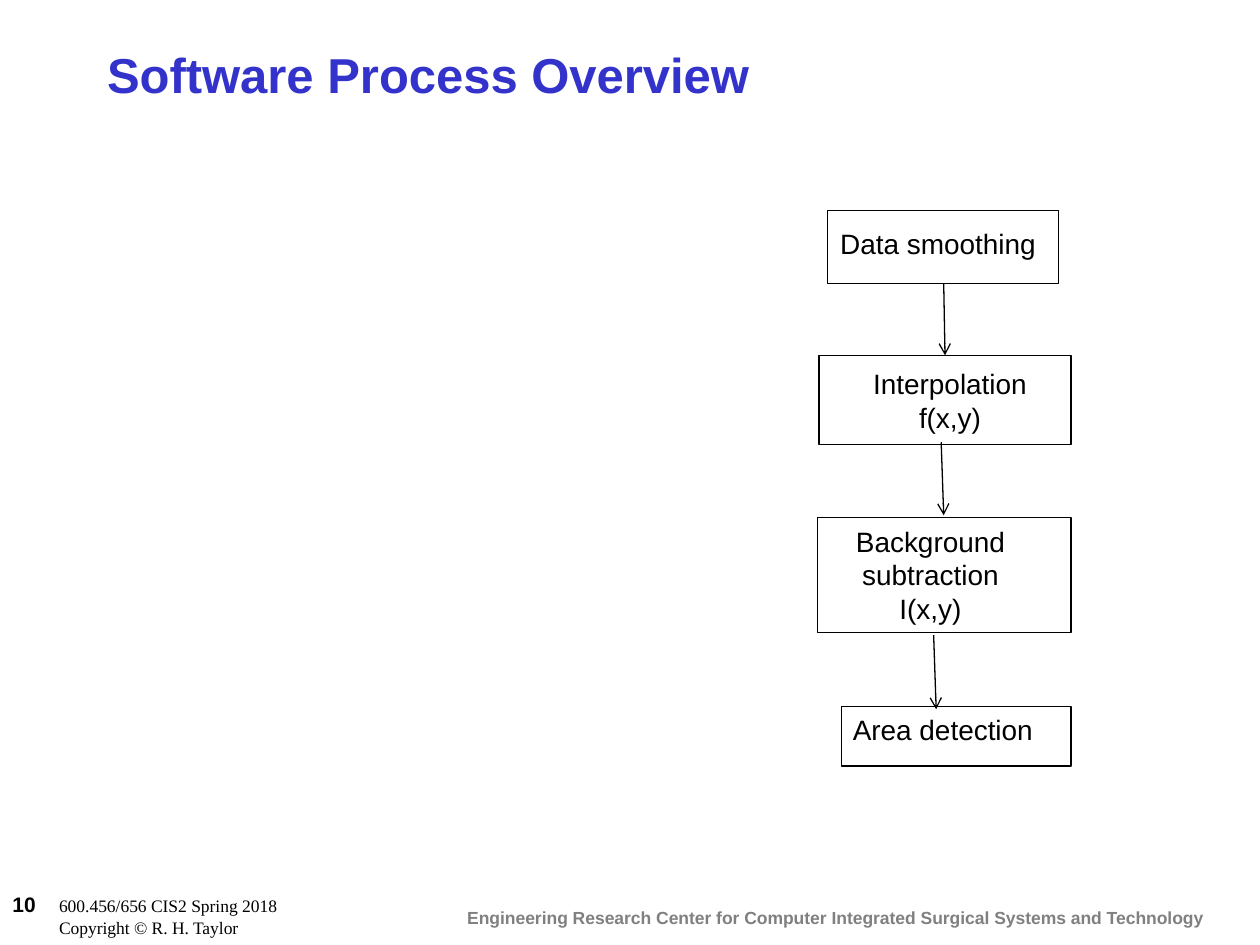
from dataclasses import dataclass

from lxml import etree
from pptx import Presentation
from pptx.dml.color import RGBColor
from pptx.enum.shapes import MSO_CONNECTOR, MSO_SHAPE
from pptx.enum.text import MSO_ANCHOR, PP_ALIGN
from pptx.oxml.ns import qn
from pptx.util import Inches, Pt

RECTANGLE = MSO_SHAPE.RECTANGLE
STRAIGHT = MSO_CONNECTOR.STRAIGHT
MIDDLE = MSO_ANCHOR.MIDDLE
LEFT = PP_ALIGN.LEFT
CENTER = PP_ALIGN.CENTER
TITLE_ONLY = 5


@dataclass(frozen=True)
class Theme:
    ink: RGBColor = RGBColor(0, 0, 0)
    paper: RGBColor = RGBColor(255, 255, 255)
    title: RGBColor = RGBColor(0x33, 0x33, 0xCC)
    muted: RGBColor = RGBColor(0x80, 0x80, 0x80)
    sans: str = "Arial"
    serif: str = "Times New Roman"
    title_size: float = 28
    step_size: float = 16
    number_size: float = 12
    footer_size: float = 10
    line_width: float = 0.75


@dataclass(frozen=True)
class Area:
    left: float
    top: float
    width: float
    height: float

    def lengths(self) -> tuple:
        return tuple(map(Inches, (self.left, self.top, self.width, self.height)))


@dataclass(frozen=True)
class Step:
    text: str
    frame: Area
    label: Area
    align: PP_ALIGN = LEFT


@dataclass(frozen=True)
class Arrow:
    start: tuple[float, float]
    end: tuple[float, float]


THEME = Theme()

STEPS = [
    Step("Data smoothing", Area(6.57, 1.67, 1.83, 0.58), Area(6.57, 1.75, 1.83, 0.37)),
    Step("Interpolation\nf(x,y)", Area(6.5, 2.82, 2, 0.71), Area(6.58, 2.86, 1.92, 0.64), CENTER),
    Step("Background subtraction I(x,y)", Area(6.49, 4.11, 2.01, 0.91),
         Area(6.47, 4.11, 1.83, 0.91), CENTER),
    Step("Area detection", Area(6.68, 5.61, 1.82, 0.47), Area(6.67, 5.61, 1.83, 0.37)),
]

ARROWS = [
    Arrow((7.49, 2.25), (7.5, 2.82)),
    Arrow((7.47, 3.51), (7.49, 4.09)),
    Arrow((7.41, 5.04), (7.43, 5.63)),
]


def style_run(span, size: float, color: RGBColor, name: str = THEME.sans, bold: bool = False) -> None:
    span.font.size = Pt(size)
    span.font.color.rgb = color
    span.font.name = name
    span.font.bold = bold


def add_text(page, area: Area, text: str, wrap: bool = True):
    box = page.shapes.add_textbox(*area.lengths())
    box.text_frame.word_wrap = wrap
    box.text_frame.text = text
    return box.text_frame


def add_title(page, text: str) -> None:
    title = page.shapes.title
    title.left, title.top, title.width, title.height = Area(0.75, 0.25, 8.5, 0.67).lengths()
    title.text_frame.text = text
    title.text_frame.vertical_anchor = MIDDLE
    para = title.text_frame.paragraphs[0]
    para.alignment = LEFT
    style_run(para.runs[0], THEME.title_size, THEME.title, bold=True)


def add_step(page, step: Step) -> None:
    frame = page.shapes.add_shape(RECTANGLE, *step.frame.lengths())
    frame.shadow.inherit = False
    frame.fill.solid()
    frame.fill.fore_color.rgb = THEME.paper
    frame.line.color.rgb = THEME.ink
    frame.line.width = Pt(THEME.line_width)
    for para in add_text(page, step.label, step.text).paragraphs:
        para.alignment = step.align
        style_run(para.runs[0], THEME.step_size, THEME.ink)


def add_arrow(page, arrow: Arrow) -> None:
    connector = page.shapes.add_connector(STRAIGHT, *map(Inches, arrow.start + arrow.end))
    connector.line.color.rgb = THEME.ink
    connector.line.width = Pt(THEME.line_width)
    etree.SubElement(connector.line._get_or_add_ln(), qn("a:tailEnd"), type="arrow")
    etree.SubElement(connector._element.spPr, qn("a:effectLst"))


def add_footer(page) -> None:
    center = add_text(
        page, Area(3.61, 7.15, 6.06, 0.27),
        "Engineering Research Center for Computer Integrated Surgical Systems and Technology",
        wrap=False)
    style_run(center.paragraphs[0].runs[0], THEME.footer_size, THEME.muted, bold=True)

    course = add_text(page, Area(0, 7.03, 4.08, 0.47), "10\t\n\tCopyright © R. H. Taylor")
    number, copyright_line = course.paragraphs
    style_run(number.runs[0], THEME.number_size, THEME.ink, bold=True)
    term = number.add_run()
    term.text = "600.456/656 CIS2 Spring 2018"
    for span in (term, copyright_line.runs[0]):
        style_run(span, THEME.footer_size, THEME.ink, THEME.serif)
    for para in course.paragraphs:
        properties = para._p.get_or_add_pPr()
        properties.set("marL", str(Inches(0.37)))
        properties.set("indent", str(Inches(-0.37)))


def main() -> None:
    deck = Presentation()
    deck.slide_width, deck.slide_height = Inches(10), Inches(7.5)
    page = deck.slides.add_slide(deck.slide_layouts[TITLE_ONLY])
    add_footer(page)
    add_title(page, "Software Process Overview")
    for step in STEPS:
        add_step(page, step)
    for arrow in ARROWS:
        add_arrow(page, arrow)
    deck.save("out.pptx")


if __name__ == "__main__":
    main()
